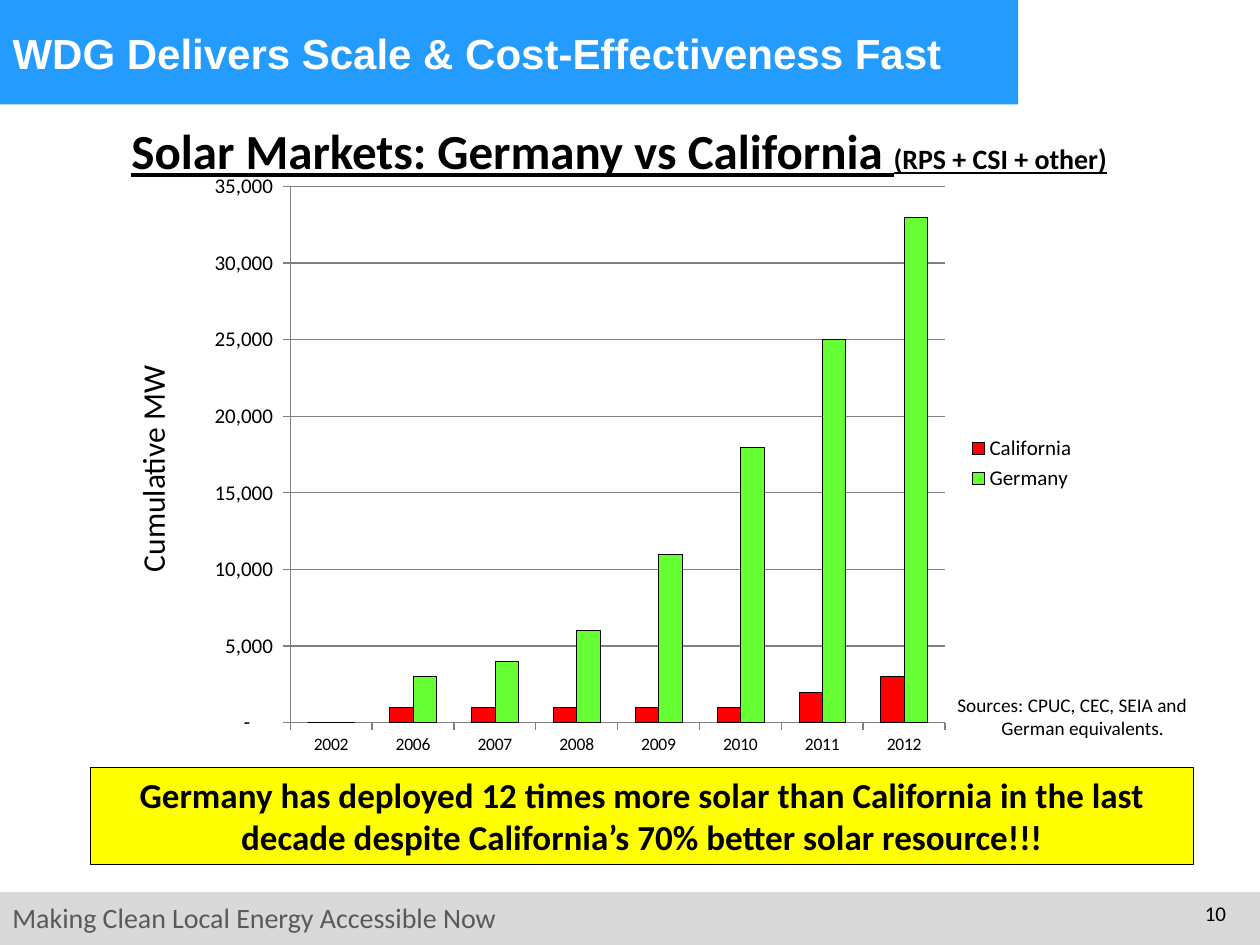
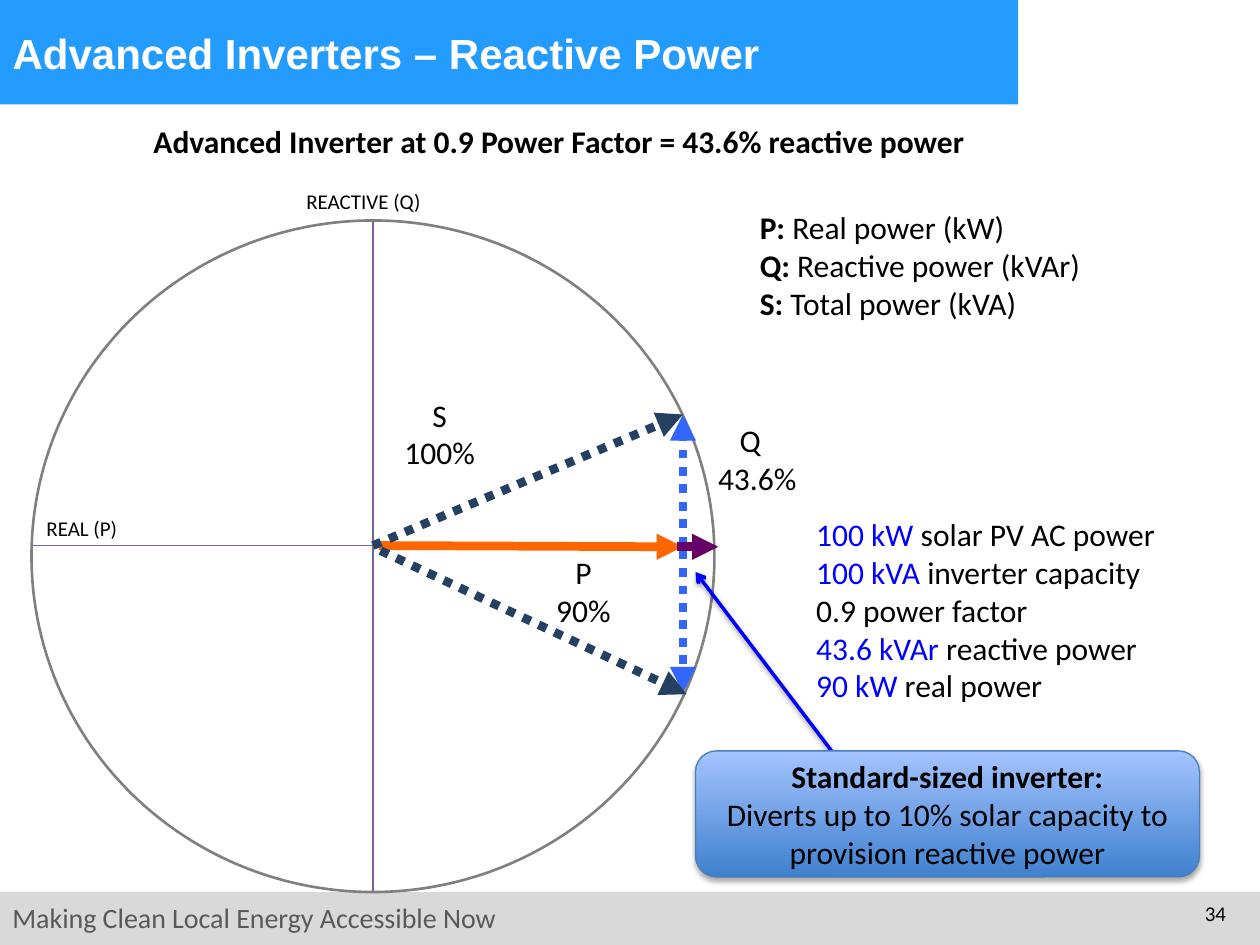
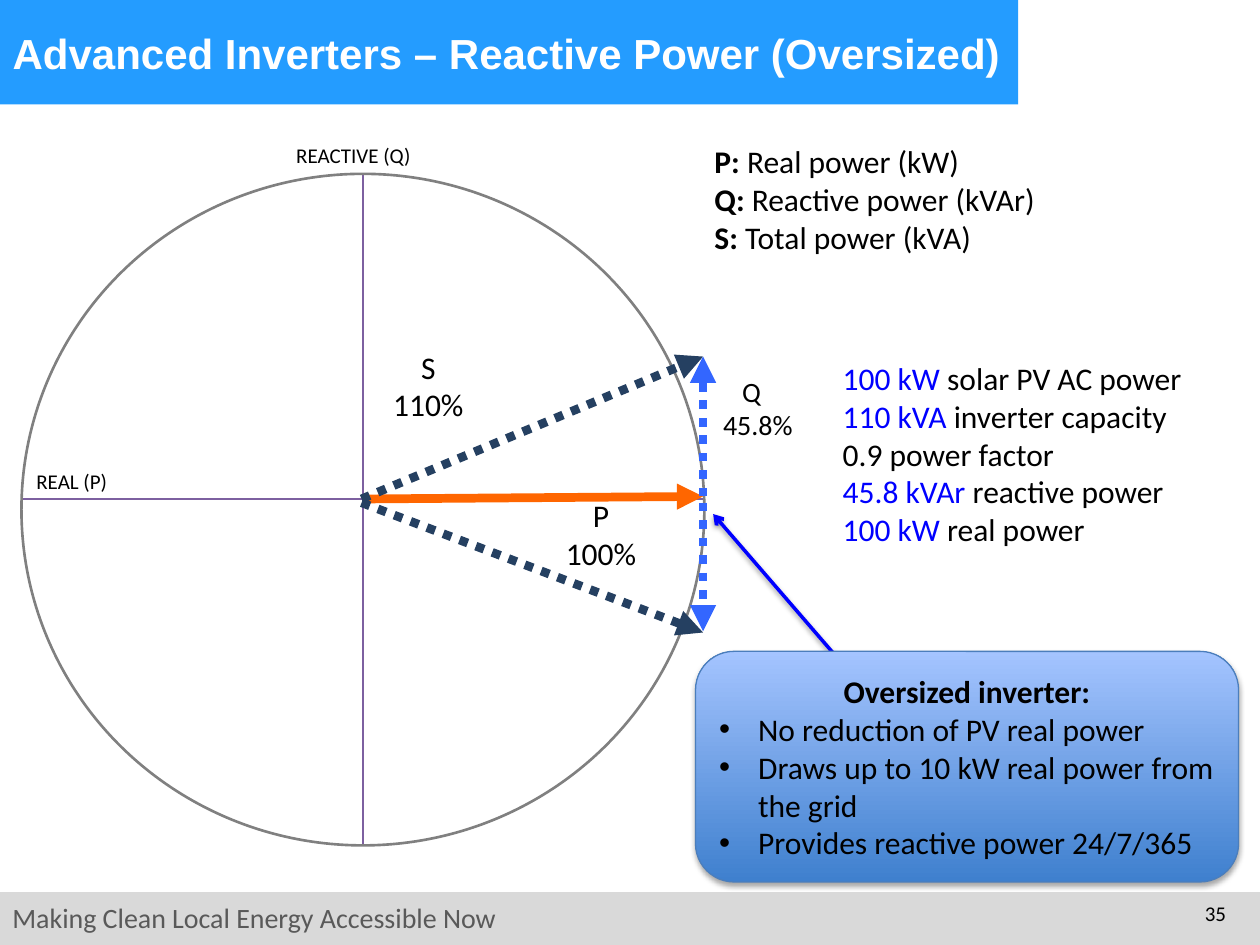
from dataclasses import dataclass
from typing import Any, NamedTuple, Optional, Sequence

from lxml.etree import SubElement
from pptx import Presentation
from pptx.chart.data import CategoryChartData
from pptx.dml.color import RGBColor
from pptx.enum.chart import XL_CHART_TYPE as ChartType
from pptx.enum.chart import XL_LEGEND_POSITION as LegendPosition
from pptx.enum.chart import XL_TICK_MARK as TickMark
from pptx.enum.dml import MSO_LINE_DASH_STYLE as Dash
from pptx.enum.shapes import MSO_CONNECTOR as Connector
from pptx.enum.shapes import MSO_SHAPE as Preset
from pptx.enum.text import MSO_ANCHOR as Anchor
from pptx.enum.text import MSO_AUTO_SIZE as AutoSize
from pptx.enum.text import PP_ALIGN as Align
from pptx.oxml.ns import qn
from pptx.slide import Slide
from pptx.util import Inches, Pt


def rgb(code: str) -> RGBColor:
    return RGBColor.from_string(code)


@dataclass(frozen=True)
class Theme:
    black: RGBColor = rgb("000000")
    white: RGBColor = rgb("FFFFFF")
    title_band: RGBColor = rgb("249CFF")
    footer_band: RGBColor = rgb("D9D9D9")
    footer_text: RGBColor = rgb("595959")
    yellow: RGBColor = rgb("FFFF00")
    california: RGBColor = rgb("FF0000")
    germany: RGBColor = rgb("66FF33")
    gray: RGBColor = rgb("808080")
    axis: RGBColor = rgb("7D60A0")
    real: RGBColor = rgb("FF6600")
    total: RGBColor = rgb("254061")
    reactive: RGBColor = rgb("3366FF")
    reserve: RGBColor = rgb("660066")
    blue: RGBColor = rgb("0000FF")
    callout_dark: RGBColor = rgb("3F80CE")
    callout_light: RGBColor = rgb("A4C4FF")
    callout_line: RGBColor = rgb("4B7EBC")
    title_font: str = "Arial"
    body_font: str = "Calibri"
    headline: int = 28
    title: int = 24
    message: int = 20
    body: int = 18
    footer: int = 16
    small: int = 12
    source: int = 11
    tick: int = 10


THEME = Theme()


class Place(NamedTuple):
    left: float
    top: float
    width: float
    height: float


class Span(NamedTuple):
    text: str
    color: Optional[RGBColor] = None
    bold: Optional[bool] = None
    size: Optional[int] = None


class Para(NamedTuple):
    spans: Sequence[Span]
    align: Optional[Align] = None
    left: float = 0
    hanging: float = 0
    bullet: str = ""


class Shadow(NamedTuple):
    opacity: int
    distance: float


class LineStyle(NamedTuple):
    color: RGBColor
    width: float
    dash: Optional[Dash] = None
    head: str = ""
    shadow: Optional[Shadow] = None


class Arrow(NamedTuple):
    style: LineStyle
    start: tuple[float, float]
    end: tuple[float, float]


class Label(NamedTuple):
    name: str
    value: str
    place: Place
    size: int = THEME.body
    shift: float = 0


@dataclass(frozen=True)
class PowerSlide:
    title: str
    title_width: float
    number: str
    circle: Place
    arrows: Sequence[Arrow]
    labels: Sequence[Label]
    definitions: Place
    facts: Sequence[tuple[str, str]]
    facts_place: Place
    callout: Sequence[Para]
    callout_place: Place


AXIS = LineStyle(THEME.axis, 0.75)
REAL = LineStyle(THEME.real, 5, head="triangle")
TOTAL = LineStyle(THEME.total, 5, Dash.ROUND_DOT, "triangle")
REACTIVE = LineStyle(THEME.reactive, 5, Dash.ROUND_DOT, "triangle")
RESERVE = LineStyle(THEME.reserve, 5, head="triangle")
POINTER = LineStyle(THEME.blue, 2, head="arrow", shadow=Shadow(38, 1.6))

YEARS = ("2002", "2006", "2007", "2008", "2009", "2010", "2011", "2012")
MARKETS = (
    ("California", THEME.california, (0, 1000, 1000, 1000, 1000, 1000, 2000, 3000)),
    ("Germany", THEME.germany, (0, 3000, 4000, 6000, 11000, 18000, 25000, 33000)),
)
DEFINITIONS = (("P: ", "Real power (kW)"), ("Q: ", "Reactive power (kVAr)"), ("S: ", "Total power (kVA)"))

STANDARD = PowerSlide(
    title="Advanced Inverters – Reactive Power",
    title_width=8,
    number="34",
    circle=Place(0.25, 1.75, 5.42, 5.33),
    arrows=(
        Arrow(REAL, (3.01, 4.33), (5.42, 4.34)),
        Arrow(TOTAL, (2.96, 4.33), (5.42, 3.29)),
        Arrow(REACTIVE, (5.42, 4.33), (5.42, 3.29)),
        Arrow(REACTIVE, (5.42, 4.37), (5.42, 5.5)),
        Arrow(TOTAL, (3.02, 4.37), (5.45, 5.51)),
        Arrow(RESERVE, (5.37, 4.34), (5.7, 4.34)),
        Arrow(POINTER, (6.6, 5.96), (5.52, 4.54)),
    ),
    labels=(
        Label("P", "90%", Place(4.17, 4.34, 0.92, 0.71)),
        Label("Q", "43.6%", Place(5.42, 3.29, 1.07, 0.71), shift=0.11),
        Label("S", "100%", Place(3.01, 3.09, 0.96, 0.71)),
    ),
    definitions=Place(5.93, 1.6, 3.85, 1.01),
    facts=(
        ("100 kW ", "solar PV AC power"),
        ("100 kVA ", "inverter capacity"),
        ("", "0.9 power factor"),
        ("43.6 kVAr ", "reactive power"),
        ("90 kW ", "real power"),
    ),
    facts_place=Place(6.38, 4.04, 3.34, 1.62),
    callout=(
        Para([Span("Standard-sized inverter:", bold=True)], Align.CENTER),
        Para([Span("Diverts up to 10% solar capacity to provision reactive power")], Align.CENTER),
    ),
    callout_place=Place(5.52, 5.96, 4, 1),
)

OVERSIZED = PowerSlide(
    title="Advanced Inverters – Reactive Power (Oversized)",
    title_width=8.25,
    number="35",
    circle=Place(0.17, 1.38, 5.42, 5.33),
    arrows=(
        Arrow(REAL, (2.92, 3.96), (5.58, 3.94)),
        Arrow(TOTAL, (2.87, 3.96), (5.58, 2.83)),
        Arrow(REACTIVE, (5.58, 3.94), (5.58, 2.83)),
        Arrow(REACTIVE, (5.58, 3.99), (5.58, 5.01)),
        Arrow(TOTAL, (2.87, 3.99), (5.58, 5.02)),
        Arrow(POINTER, (6.74, 5.33), (5.66, 4.08)),
    ),
    labels=(
        Label("P", "100%", Place(4.31, 3.89, 0.92, 0.71)),
        Label("Q", "45.8%", Place(5.43, 2.92, 1.07, 0.64), THEME.footer, 0.1),
        Label("S", "110%", Place(2.92, 2.71, 0.96, 0.71)),
    ),
    definitions=Place(5.57, 1.08, 4.26, 1.01),
    facts=(
        ("100 kW ", "solar PV AC power"),
        ("110 kVA ", "inverter capacity"),
        ("", "0.9 power factor"),
        ("45.8 kVAr ", "reactive power"),
        ("100 kW ", "real power"),
    ),
    facts_place=Place(6.59, 2.8, 3.33, 1.62),
    callout=(
        Para([Span("Oversized inverter:", bold=True)], Align.CENTER),
        *(
            Para([Span(point)], Align.LEFT, 0.31, 0.31, "•")
            for point in (
                "No reduction of PV real power",
                "Draws up to 10 kW real power from the grid",
                "Provides reactive power 24/7/365",
            )
        ),
    ),
    callout_place=Place(5.52, 5.17, 4.31, 1.83),
)


def inches(values: Sequence[float]) -> list[int]:
    return [Inches(value) for value in values]


def write_text(
    shape: Any,
    content: str | Sequence[Para],
    *,
    size: int = THEME.body,
    color: RGBColor = THEME.black,
    font: str = THEME.body_font,
    bold: bool = False,
    underline: bool = False,
    align: Align = Align.LEFT,
    anchor: Anchor = Anchor.TOP,
) -> None:
    frame = shape.text_frame
    frame.word_wrap = True
    frame.auto_size = AutoSize.NONE
    frame.vertical_anchor = anchor
    paras = [Para([Span(content)])] if isinstance(content, str) else content
    for index, para in enumerate(paras):
        line = frame.paragraphs[0] if index == 0 else frame.add_paragraph()
        properties = line._p.get_or_add_pPr()
        properties.set("marL", str(Inches(para.left)))
        properties.set("indent", str(-Inches(para.hanging)))
        if para.bullet:
            SubElement(properties, qn("a:buFont"), typeface="Arial")
            SubElement(properties, qn("a:buChar"), char=para.bullet)
        else:
            SubElement(properties, qn("a:buNone"))
        line.alignment = align if para.align is None else para.align
        line.space_before = Pt(0)
        for span in para.spans:
            run = line.add_run()
            run.text = span.text
            run.font.name = font
            run.font.size = Pt(span.size or size)
            run.font.bold = bold if span.bold is None else span.bold
            run.font.underline = underline
            run.font.color.rgb = span.color or color


def add_text(slide: Slide, place: Place, content: str | Sequence[Para], **formats: Any) -> Any:
    box = slide.shapes.add_textbox(*inches(place))
    write_text(box, content, **formats)
    return box


def fill_placeholder(shape: Any, place: Place, content: str | Sequence[Para], **formats: Any) -> None:
    shape.left, shape.top, shape.width, shape.height = inches(place)
    write_text(shape, content, **formats)


def add_box(
    slide: Slide,
    preset: Preset,
    place: Place,
    fill: Optional[RGBColor] = None,
    line: Optional[LineStyle] = None,
) -> Any:
    box = slide.shapes.add_shape(preset, *inches(place))
    box.shadow.inherit = False
    if fill is None:
        box.fill.background()
    else:
        box.fill.solid()
        box.fill.fore_color.rgb = fill
    if line is None:
        box.line.fill.background()
    else:
        box.line.color.rgb = line.color
        box.line.width = Pt(line.width)
    return box


def add_shadow(effects: Any, shadow: Shadow) -> None:
    outer = SubElement(
        effects, qn("a:outerShdw"), blurRad=str(Pt(3.1)), dist=str(Pt(shadow.distance)),
        dir="5400000", rotWithShape="0",
    )
    color = SubElement(outer, qn("a:srgbClr"), val=str(THEME.black))
    SubElement(color, qn("a:alpha"), val=str(shadow.opacity * 1000))


def add_line(slide: Slide, arrow: Arrow) -> None:
    style = arrow.style
    line = slide.shapes.add_connector(Connector.STRAIGHT, *inches(arrow.start + arrow.end))
    line.line.color.rgb = style.color
    line.line.width = Pt(style.width)
    if style.dash:
        line.line.dash_style = style.dash
    if style.head:
        SubElement(line.line._get_or_add_ln(), qn("a:tailEnd"), type=style.head)
    effects = SubElement(line._element.spPr, qn("a:effectLst"))
    if style.shadow:
        add_shadow(effects, style.shadow)


def brand_layout(layout: Any, slide: Slide) -> None:
    for shape in list(layout.placeholders):
        if shape.placeholder_format.idx >= 10:
            shape._element.getparent().remove(shape._element)
    bands = (
        add_box(slide, Preset.RECTANGLE, Place(0, 7.08, 10, 0.42), THEME.footer_band),
        add_text(
            slide, Place(0, 7.1, 5.17, 0.37), "Making Clean Local Energy Accessible Now",
            size=THEME.footer, color=THEME.footer_text,
        ),
        add_box(slide, Preset.RECTANGLE, Place(0, 0, 8.08, 0.83), THEME.title_band),
    )
    for band in bands:
        layout.shapes._spTree.append(band._element)


def start_slide(slide: Slide, title: str, number: str, title_width: float = 8) -> None:
    fill_placeholder(
        slide.shapes.title, Place(0, 0, title_width, 0.83), title, size=THEME.title,
        color=THEME.white, font=THEME.title_font, bold=True, anchor=Anchor.MIDDLE,
    )
    add_text(slide, Place(9.33, 7.1, 0.5, 0.4), number, size=THEME.small, align=Align.RIGHT)


def add_market_chart(slide: Slide) -> None:
    data = CategoryChartData()
    data.categories = YEARS
    for name, _, values in MARKETS:
        data.add_series(name, values)
    place = inches(Place(1.52, 1.29, 7.12, 4.78))
    chart = slide.shapes.add_chart(ChartType.COLUMN_CLUSTERED, *place, data).chart
    chart.has_title = False
    chart.font.name = THEME.body_font
    chart.font.size = Pt(THEME.tick)
    chart.font.color.rgb = THEME.black
    chart.has_legend = True
    chart.legend.position = LegendPosition.RIGHT
    chart.legend.include_in_layout = False
    chart.legend.font.size = Pt(THEME.small)

    plot = chart.plots[0]
    plot.gap_width = 150
    plot.overlap = 0
    plot.vary_by_categories = False
    for series, (_, color, _) in zip(plot.series, MARKETS):
        series.format.fill.solid()
        series.format.fill.fore_color.rgb = color
        series.format.line.color.rgb = THEME.black
        series.format.line.width = Pt(0.25)

    scale = chart.value_axis
    scale.minimum_scale, scale.maximum_scale, scale.major_unit = 0, 35000, 5000
    scale.tick_labels.font.size = Pt(THEME.small)
    scale.tick_labels.number_format = r'_(* #,##0_);_(* \(#,##0\);_(* "-"??_);_(@_)'
    scale.tick_labels.number_format_is_linked = False
    scale.major_gridlines.format.line.color.rgb = THEME.gray
    for axis in (scale, chart.category_axis):
        axis.major_tick_mark = TickMark.OUTSIDE
        axis.format.line.color.rgb = THEME.gray

    area = chart._chartSpace.chart.plotArea
    for old in area.findall(qn("c:layout")):
        area.remove(old)
    layout = SubElement(area, qn("c:layout"))
    area.insert(0, layout)
    manual = SubElement(layout, qn("c:manualLayout"))
    settings = (
        ("layoutTarget", "inner"), ("xMode", "edge"), ("yMode", "edge"),
        ("x", "0.11"), ("y", "0.04"), ("w", "0.73"), ("h", "0.89"),
    )
    for tag, value in settings:
        SubElement(manual, qn(f"c:{tag}"), val=value)


def build_market_slide(slide: Slide) -> None:
    start_slide(slide, "WDG Delivers Scale & Cost-Effectiveness Fast", "10")
    headline = [
        Span("Solar Markets: Germany vs California "),
        Span("(RPS + CSI + other)", size=THEME.footer),
    ]
    fill_placeholder(
        slide.placeholders[1], Place(-0.17, 0.91, 10.17, 0.75), [Para(headline, left=0.38, hanging=0.38)],
        size=THEME.headline, bold=True, underline=True, align=Align.CENTER,
    )
    message = add_box(
        slide, Preset.RECTANGLE, Place(0.72, 6.09, 8.75, 0.77), THEME.yellow, LineStyle(THEME.black, 0.75)
    )
    write_text(
        message,
        "Germany has deployed 12 times more solar than California in the last decade "
        "despite California’s 70% better solar resource!!!",
        size=THEME.message, bold=True, align=Align.CENTER,
    )
    sources = [Para([Span("Sources: CPUC, CEC, SEIA and")]), Para([Span("German equivalents.")], left=0.35)]
    add_text(slide, Place(7.5, 5.45, 2.5, 0.47), sources, size=THEME.source)
    unit = add_text(slide, Place(1.01, 1.81, 0.5, 2.83), "Cumulative MW")
    unit.text_frame._txBody.bodyPr.set("vert", "vert270")
    add_market_chart(slide)


def add_callout(slide: Slide, place: Place, paras: Sequence[Para]) -> None:
    box = add_box(slide, Preset.ROUNDED_RECTANGLE, place, line=LineStyle(THEME.callout_line, 0.75))
    box.fill.gradient()
    box.fill.gradient_angle = 90
    for stop, color in zip(box.fill.gradient_stops, (THEME.callout_dark, THEME.callout_light)):
        stop.color.rgb = color
    add_shadow(box._element.spPr.find(qn("a:effectLst")), Shadow(35, 1.8))
    write_text(box, paras, anchor=Anchor.MIDDLE)


def build_power_slide(slide: Slide, power: PowerSlide) -> None:
    start_slide(slide, power.title, power.number, power.title_width)
    left, top, width, height = power.circle
    center, level = left + width / 2, top + 2.58
    add_line(slide, Arrow(AXIS, (center, top), (center, top + height)))
    add_line(slide, Arrow(AXIS, (left, level), (left + width, level)))
    add_box(slide, Preset.OVAL, power.circle, line=LineStyle(THEME.gray, 1.5))
    add_text(
        slide, Place(left + 1.9, top - 0.3, 1.47, 0.3), "REACTIVE (Q)", size=THEME.small, align=Align.CENTER
    )
    add_text(slide, Place(left + 0.02, level - 0.29, 1.58, 0.3), "REAL (P)", size=THEME.small)
    for label in power.labels:
        lines = [Para([Span(label.name)]), Para([Span(label.value)], left=label.shift)]
        add_text(slide, label.place, lines, size=label.size, align=Align.CENTER)
    for arrow in power.arrows:
        add_line(slide, arrow)
    terms = [
        Para([Span(term, bold=True), Span(meaning)], left=0.34, hanging=0.34) for term, meaning in DEFINITIONS
    ]
    fill_placeholder(slide.placeholders[1], power.definitions, terms)
    facts = [
        Para([Span(amount, THEME.blue), Span(meaning)] if amount else [Span(meaning)])
        for amount, meaning in power.facts
    ]
    add_text(slide, power.facts_place, facts)
    add_callout(slide, power.callout_place, power.callout)


def main() -> None:
    deck = Presentation()
    deck.slide_width, deck.slide_height = Inches(10), Inches(7.5)
    layout = deck.slide_layouts[1]
    market, standard, oversized = (deck.slides.add_slide(layout) for _ in range(3))
    brand_layout(layout, market)
    build_market_slide(market)
    build_power_slide(standard, STANDARD)
    add_text(
        standard, Place(1.12, 0.92, 7.63, 0.4),
        "Advanced Inverter at 0.9 Power Factor = 43.6% reactive power", bold=True,
    )
    build_power_slide(oversized, OVERSIZED)
    deck.save("out.pptx")


if __name__ == "__main__":
    main()
